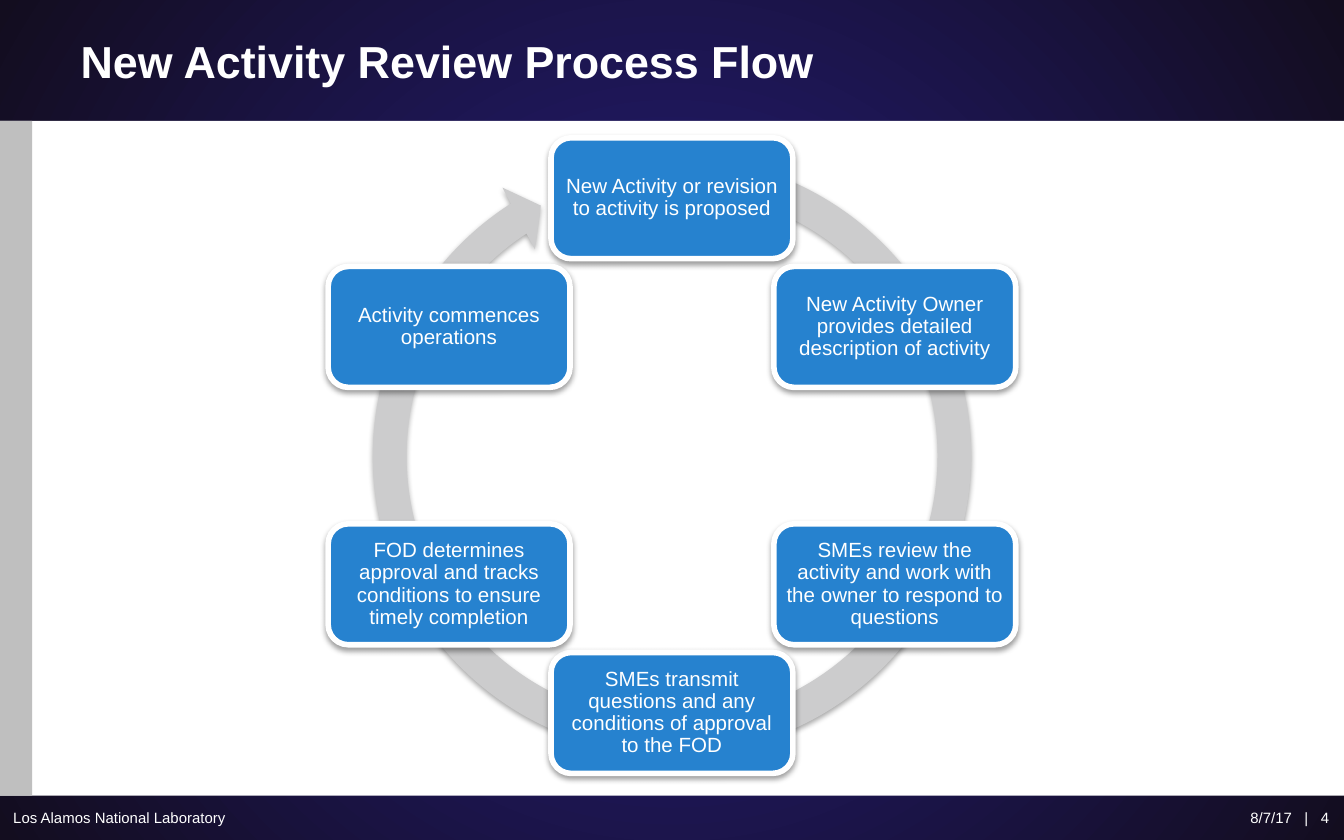
"""Build the New Activity Review process flow slide as a ring of steps."""
import math
from lxml import etree
from pptx import Presentation
from pptx.dml.color import RGBColor
from pptx.enum import shapes, text
from pptx.oxml.ns import qn
from pptx import util as u

WHITE = RGBColor(0xFF, 0xFF, 0xFF)
BLUE = RGBColor(0x26, 0x82, 0xCF)
RING = RGBColor(0xCC, 0xCC, 0xCD)
SIDE = RGBColor(0xBF, 0xBF, 0xBF)
GLOW = RGBColor(0x25, 0x1D, 0x7D)
NIGHT = RGBColor(0x13, 0x0D, 0x1F)

TITLE = "New Activity Review Process Flow"
FOOTER = "Los Alamos National Laboratory"
PAGE = "8/7/17   |   4"
STEPS = [
    "New Activity or revision to activity is proposed",
    "New Activity Owner provides detailed description of activity",
    "SMEs review the activity and work with the owner to respond to questions",
    "SMEs transmit questions and any conditions of approval to the FOD",
    "FOD determines approval and tracks conditions to ensure timely completion",
    "Activity commences operations",
]

W, H = 10, 6.25
HEAD, FOOT = 0.9, 0.33
BODY = H - HEAD - FOOT
SIDE_W = 0.24
CX, CY = W / 2, 3.39
RADIUS = 1.915
STEP_W, STEP_H = 1.8, 0.9
RING_SIZE = 4.72
RING_ADJ = (0.053, 3.126, 142.264, 171.28, 0.055)


def put_text(sp, words, size=11, bold=False, align=text.PP_ALIGN.LEFT, inset=None, spacing=None):
    tf = sp.text_frame
    tf.word_wrap = True
    tf.auto_size = text.MSO_AUTO_SIZE.NONE
    tf.vertical_anchor = text.MSO_ANCHOR.MIDDLE
    if inset is not None:
        tf.margin_left = tf.margin_right = tf.margin_top = tf.margin_bottom = u.Inches(inset)
    p = tf.paragraphs[0]
    p.alignment = align
    if spacing:
        p.line_spacing = spacing
    r = p.add_run()
    r.text = words
    r.font.name, r.font.size, r.font.bold = "Arial", u.Pt(size), bold
    r.font.color.rgb = WHITE


def add_shape(slide, kind, box, fill, line=None, shadow=None):
    sp = slide.shapes.add_shape(kind, *map(u.Inches, box))
    sp.shadow.inherit = False
    sp.fill.solid()
    sp.fill.fore_color.rgb = fill
    if line is None:
        sp.line.fill.background()
    else:
        sp.line.color.rgb, sp.line.width = line, u.Pt(3)
    if shadow:
        alpha, blur, dist = shadow
        effects = sp._element.spPr.find(qn("a:effectLst"))
        outer = etree.SubElement(effects, qn("a:outerShdw"), blurRad=str(u.Pt(blur)),
                                 dist=str(u.Pt(dist)), dir="5400000", rotWithShape="0")
        color = etree.SubElement(outer, qn("a:srgbClr"), val="000000")
        etree.SubElement(color, qn("a:alpha"), val=str(alpha * 1000))
    return sp


def set_background(slide):
    fill = slide.background.fill
    fill.gradient()
    for stop, color, position in zip(fill.gradient_stops, (GLOW, NIGHT), (0, 1)):
        stop.color.rgb, stop.position = color, position
    grad = slide._element.find(".//" + qn("a:gradFill"))
    linear = grad.find(qn("a:lin"))
    radial = etree.Element(qn("a:path"), path="circle")
    etree.SubElement(radial, qn("a:fillToRect"), l="50000", t="50000", r="50000", b="50000")
    grad.replace(linear, radial)


def main():
    prs = Presentation()
    prs.slide_width, prs.slide_height = u.Inches(W), u.Inches(H)
    slide = prs.slides.add_slide(prs.slide_layouts[5])
    set_background(slide)
    kinds = shapes.MSO_SHAPE
    add_shape(slide, kinds.RECTANGLE, (0, HEAD, W, BODY), WHITE)

    title = slide.shapes.title
    title.left, title.top, title.width, title.height = map(u.Inches, (0.5, 0, W - 1, HEAD))
    put_text(title, TITLE, size=24, bold=True)

    for words, left, width, align in (
        (PAGE, 7.66, 2.33, text.PP_ALIGN.RIGHT),
        (FOOTER, 0, 3.62, text.PP_ALIGN.LEFT),
    ):
        box = slide.shapes.add_textbox(*map(u.Inches, (left, H - FOOT, width, FOOT)))
        put_text(box, words, size=8, align=align)

    ring = add_shape(slide, kinds.CIRCULAR_ARROW,
                     (CX - RING_SIZE / 2, CY - RING_SIZE / 2, RING_SIZE, RING_SIZE),
                     RING, shadow=(35, 3.1, 1.8))
    for i, value in enumerate(RING_ADJ):
        ring.adjustments[i] = value

    for i, words in enumerate(STEPS):
        angle = math.tau * i / len(STEPS)
        left = CX + RADIUS * math.sin(angle) - STEP_W / 2
        top = CY - RADIUS * math.cos(angle) - STEP_H / 2
        sp = add_shape(slide, kinds.ROUNDED_RECTANGLE, (left, top, STEP_W, STEP_H),
                       BLUE, line=WHITE, shadow=(38, 3.1, 1.6))
        put_text(sp, words, align=text.PP_ALIGN.CENTER, inset=0.05, spacing=0.9)

    add_shape(slide, kinds.RECTANGLE, (0, HEAD, SIDE_W, BODY), SIDE)
    prs.save("out.pptx")


if __name__ == "__main__":
    main()
